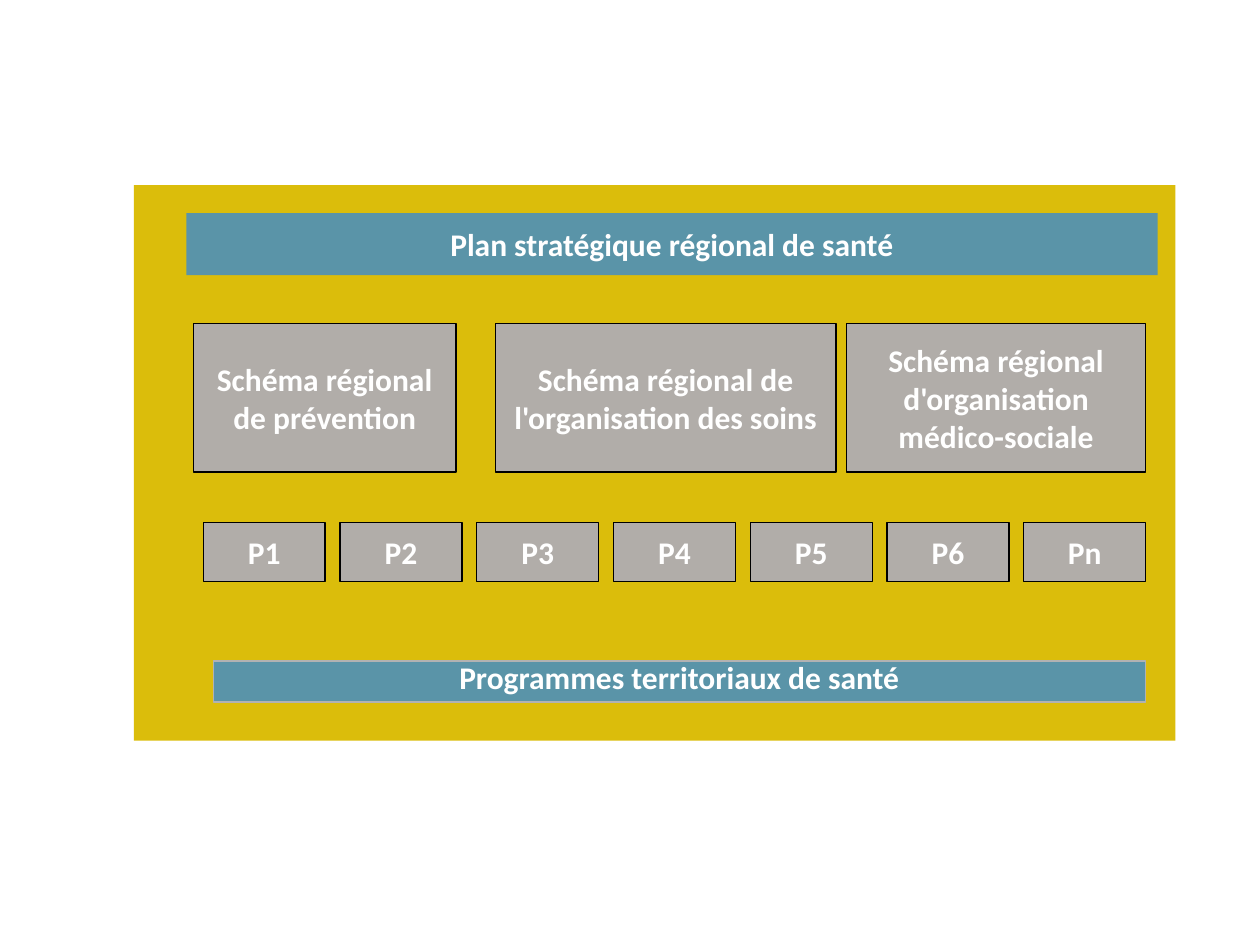
"""Build the slide of the regional health plan and its parts."""
from pptx import Presentation as Deck
from pptx.dml.color import RGBColor as Color
from pptx.enum.shapes import MSO_SHAPE as Form
from pptx.enum.text import MSO_ANCHOR as Anchor, PP_ALIGN as Align
from pptx.util import Pt

GOLD, BLUE, GREY = "DBBD0B", "5A94A8", "B1ADA9"
BLACK, WHITE, SILVER = "000000", "FFFFFF", "B2B2B2"


def paint(fill, tint):
    fill.solid()
    fill.fore_color.rgb = Color.from_string(tint)


class Chart:
    font, size = "Calibri", 18

    def __init__(self, slide):
        self.group = slide.shapes.add_group_shape()

    def panel(self, left, top, width, height, tint, edge=None):
        box = self.group.shapes.add_shape(
            Form.RECTANGLE, Pt(left), Pt(top), Pt(width), Pt(height))
        box.shadow.inherit = False
        paint(box.fill, tint)
        if edge:
            paint(box.line.fill, edge)
            box.line.width = Pt(0.75)
        else:
            box.line.fill.background()
        return box

    def label(self, text, *place, pad=(3.6, 3.6), side=7.2):
        frame = self.panel(*place).text_frame
        frame.word_wrap = True
        frame.vertical_anchor = Anchor.MIDDLE
        frame.margin_left = frame.margin_right = Pt(side)
        frame.margin_top, frame.margin_bottom = map(Pt, pad)
        frame.text = text
        for para in frame.paragraphs:
            para.alignment = Align.CENTER
            for run in para.runs:
                run.font.name, run.font.size = self.font, Pt(self.size)
                run.font.bold = True
                paint(run.font.fill, WHITE)


def main():
    deck = Deck()
    deck.slide_width, deck.slide_height = Pt(720), Pt(540)
    chart = Chart(deck.slides.add_slide(deck.slide_layouts[6]))

    chart.panel(76.5, 105.8, 595.2, 317.5, GOLD)
    chart.label("Plan stratégique régional de santé",
                106.5, 121.8, 555, 35.5, BLUE)

    for text, left, width in (
            ("Schéma régional de prévention", 110.4, 150.3),
            ("Schéma régional de l'organisation des soins", 283, 194.8),
            ("Schéma régional\nd'organisation médico-sociale", 483.7, 171)):
        chart.label(text, left, 184.8, width, 85, GREY, BLACK)

    for step, mark in enumerate("123456n"):
        chart.label(f"P{mark}", 116.1 + 78.15 * step, 298.4, 69.7, 33.8,
                    GREY, BLACK)

    chart.label("Programmes territoriaux de santé",
                122, 377.8, 532.5, 23.4, BLUE, SILVER, pad=(0, 5.8), side=0)
    deck.save("out.pptx")


if __name__ == "__main__":
    main()
